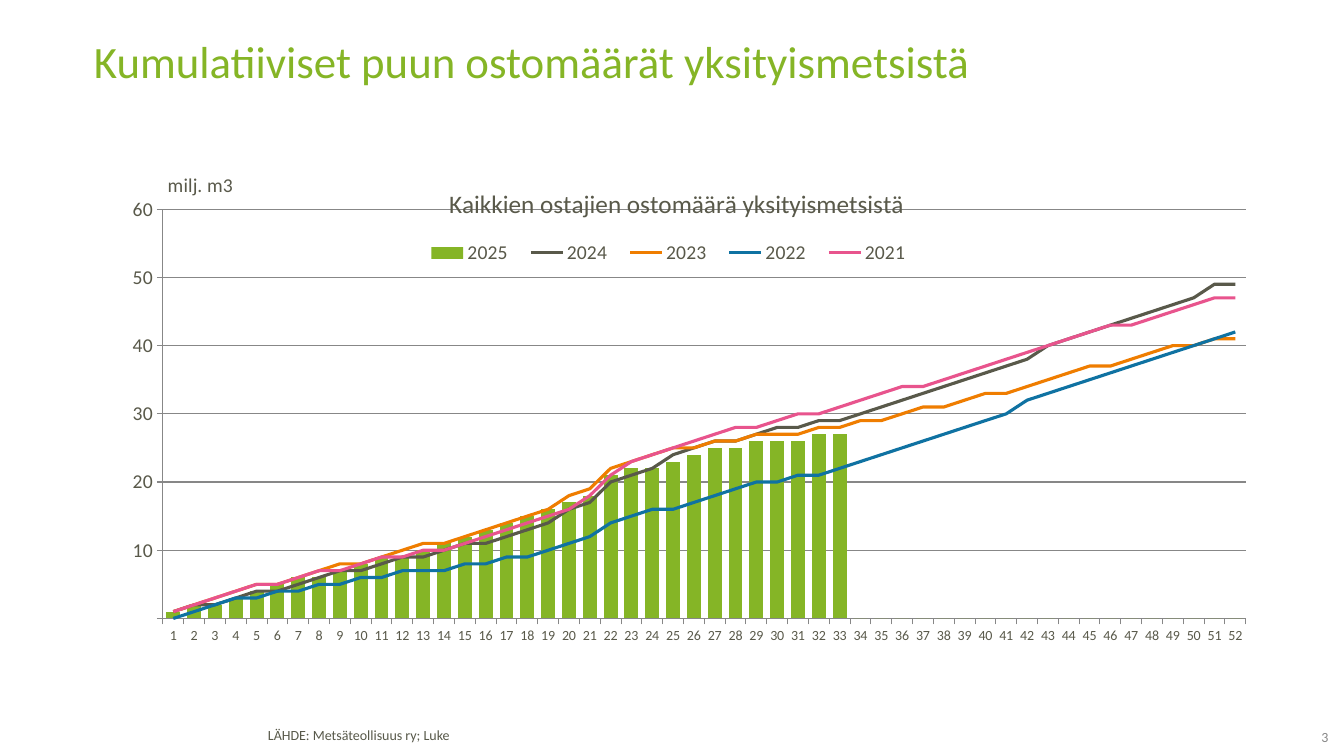
"""Build a slide comparing cumulative wood purchases by week and year."""
from dataclasses import dataclass
from itertools import pairwise

import lxml.etree
import pptx
import pptx.chart.chart
import pptx.chart.data
import pptx.dml.color
import pptx.enum.chart
import pptx.enum.text
import pptx.oxml.ns
import pptx.slide
import pptx.util

qn = pptx.oxml.ns.qn
Align = pptx.enum.text.PP_ALIGN
Anchor = pptx.enum.text.MSO_ANCHOR
Color = pptx.dml.color.RGBColor


@dataclass(frozen=True)
class Theme:
    font: str = "Calibri"
    green: str = "85B526"
    text: str = "59594A"
    source: str = "58594A"
    gray: str = "878787"
    orange: str = "EF7D00"
    blue: str = "0F72A2"
    pink: str = "E8548D"
    title_size: int = 32
    chart_title_size: int = 18
    label_size: int = 14
    small_size: int = 10
    line_width: float = 2.25
    rule_width: float = 0.75


@dataclass(frozen=True)
class Frame:
    left: float
    top: float
    width: float
    height: float


@dataclass(frozen=True)
class Label:
    text: str
    frame: Frame
    size: int
    color: str
    spacing: float = 1.0
    align: Align = Align.LEFT
    anchor: Anchor = Anchor.TOP
    insets: tuple[float, float, float, float] = (0.1, 0.05, 0.1, 0.05)


@dataclass(frozen=True)
class Year:
    name: str
    color: str
    millions: list[float]


THEME = Theme()
COLUMNS, ROWS = 160, 90
WIDTH, HEIGHT = pptx.util.Inches(13.33), pptx.util.Inches(7.5)
MILLION = 1_000_000

LABELS = [
    Label("LÄHDE: Metsäteollisuus ry; Luke", Frame(30.72, 86.16, 86.16, 3.24),
          THEME.small_size, THEME.source, spacing=0.85),
    Label("3", Frame(151.8, 86.88, 6.36, 2.28), THEME.small_size, THEME.gray,
          align=Align.RIGHT, anchor=Anchor.MIDDLE, insets=(0, 0, 0, 0.04)),
    Label("Kumulatiiviset puun ostomäärät yksityismetsistä", Frame(10, 4.68, 140.28, 11.76),
          THEME.title_size, THEME.green, spacing=0.8),
]
CHART_FRAME = Frame(10, 18.84, 140.28, 61.92)

TURNING_WEEKS = [1, 5, 10, 16, 19, 21, 22, 25, 28, 33, 39, 45, 51, 52]
YEARS = [
    Year("2025", THEME.green, [0.7, 4.3, 7.9, 12.6, 15.7, 18.2, 20.7, 23.4, 25.4, 27.1]),
    Year("2024", THEME.text, [
        0.8, 3.6, 7.3, 11.2, 14.3, 17.2, 19.7, 23.7, 26.4, 29.2, 35.2, 41.7, 48.6, 48.7]),
    Year("2023", THEME.orange, [
        0.9, 4.6, 8.4, 12.8, 16.4, 19.2, 21.8, 24.7, 26.3, 28.1, 31.8, 36.6, 41.2, 41.3]),
    Year("2022", THEME.blue, [
        0.5, 3.3, 5.8, 8.2, 9.9, 11.8, 13.8, 16.4, 19.2, 21.9, 28.3, 34.7, 41.4, 41.9]),
    Year("2021", THEME.pink, [
        0.8, 4.6, 7.9, 11.6, 14.7, 18.3, 21.4, 25, 27.9, 30.8, 36.2, 41.7, 47, 47.4]),
]


def weekly_volumes(year: Year) -> list[int]:
    volumes = [round(year.millions[0])]
    for (start, low), (end, high) in pairwise(zip(TURNING_WEEKS, year.millions)):
        step = (high - low) / (end - start)
        volumes += [round(low + step * week) for week in range(1, end - start + 1)]
    volumes += [0] * (TURNING_WEEKS[-1] - len(volumes))
    return [volume * MILLION for volume in volumes]


def place(frame: Frame) -> tuple[int, int, int, int]:
    return (round(frame.left * WIDTH / COLUMNS), round(frame.top * HEIGHT / ROWS),
            round(frame.width * WIDTH / COLUMNS), round(frame.height * HEIGHT / ROWS))


def add_span(para, text: str, size: int, color: str) -> None:
    span = para.add_run()
    span.text = text
    span.font.name = THEME.font
    span.font.size = pptx.util.Pt(size)
    span.font.bold = False
    span.font.color.rgb = Color.from_string(color)


def add_label(page: pptx.slide.Slide, label: Label) -> None:
    box = page.shapes.add_textbox(*place(label.frame)).text_frame
    box.word_wrap = True
    box.vertical_anchor = label.anchor
    box.margin_left, box.margin_top, box.margin_right, box.margin_bottom = map(
        pptx.util.Inches, label.insets)
    para = box.paragraphs[0]
    para.alignment = label.align
    para.line_spacing = label.spacing
    add_span(para, label.text, label.size, label.color)


def set_layout(parent, index: int, percents: dict[str, float], inner: bool = False) -> None:
    for old in parent.findall(qn("c:layout")):
        parent.remove(old)
    layout = parent.makeelement(qn("c:layout"))
    parent.insert(index, layout)
    manual = lxml.etree.SubElement(layout, qn("c:manualLayout"))
    settings = {"layoutTarget": "inner"} if inner else {}
    settings |= {"xMode": "edge", "yMode": "edge"}
    settings |= {key: f"{percent / 100:g}" for key, percent in percents.items()}
    for key, setting in settings.items():
        lxml.etree.SubElement(manual, qn(f"c:{key}")).set("val", setting)


def move_to_lines(chart: pptx.chart.chart.Chart) -> None:
    bars = chart.element.xpath("c:chart/c:plotArea/c:barChart")[0]
    lines = bars.makeelement(qn("c:lineChart"))
    bars.addnext(lines)
    lxml.etree.SubElement(lines, qn("c:grouping")).set("val", "standard")
    lxml.etree.SubElement(lines, qn("c:varyColors")).set("val", "0")
    for series in bars.findall(qn("c:ser"))[1:]:
        for flag in series.findall(qn("c:invertIfNegative")):
            series.remove(flag)
        lines.append(series)
    lxml.etree.SubElement(lines, qn("c:marker")).set("val", "1")
    for axis in bars.findall(qn("c:axId")):
        lxml.etree.SubElement(lines, qn("c:axId")).set("val", axis.get("val"))


def style_line(line, color: str, width: float) -> None:
    line.color.rgb = Color.from_string(color)
    line.width = pptx.util.Pt(width)


def style_axes(chart: pptx.chart.chart.Chart) -> None:
    weeks, volume = chart.category_axis, chart.value_axis
    for axis, size in ((weeks, THEME.small_size), (volume, THEME.label_size)):
        axis.major_tick_mark = pptx.enum.chart.XL_TICK_MARK.OUTSIDE
        axis.tick_labels.font.size = pptx.util.Pt(size)
        style_line(axis.format.line, THEME.gray, THEME.rule_width)
    volume.minimum_scale, volume.maximum_scale, volume.major_unit = 0, 60 * MILLION, 10 * MILLION
    volume.tick_labels.number_format = "#,,"
    volume.tick_labels.number_format_is_linked = False
    volume.has_major_gridlines = True
    style_line(volume.major_gridlines.format.line, THEME.gray, THEME.rule_width)
    add_span(volume.axis_title.text_frame.paragraphs[0], "milj. m3", THEME.label_size, THEME.text)
    title = chart.element.xpath("c:chart/c:plotArea/c:valAx/c:title")[0]
    body = title.xpath(".//a:bodyPr")[0]
    body.set("rot", "0")
    body.set("vert", "horz")
    set_layout(title, 1, {"x": 6.8, "y": 1.9})


def add_purchase_chart(page: pptx.slide.Slide) -> None:
    data = pptx.chart.data.CategoryChartData(number_format="#,,")
    data.categories = [str(week + 1) for week in range(TURNING_WEEKS[-1])]
    for year in YEARS:
        data.add_series(year.name, weekly_volumes(year))
    kind = pptx.enum.chart.XL_CHART_TYPE.COLUMN_CLUSTERED
    chart = page.shapes.add_chart(kind, *place(CHART_FRAME), data).chart
    chart.font.name = THEME.font
    chart.font.size = pptx.util.Pt(THEME.small_size)
    chart.font.color.rgb = Color.from_string(THEME.text)
    move_to_lines(chart)
    bars, lines = chart.plots
    bars.gap_width = 50
    bars.vary_by_categories = False
    bars.series[0].format.fill.solid()
    bars.series[0].format.fill.fore_color.rgb = Color.from_string(YEARS[0].color)
    for series, year in zip(lines.series, YEARS[1:]):
        style_line(series.format.line, year.color, THEME.line_width)
        series.marker.style = pptx.enum.chart.XL_MARKER_STYLE.NONE
        series.smooth = False
    style_axes(chart)
    add_span(chart.chart_title.text_frame.paragraphs[0],
             "Kaikkien ostajien ostomäärä yksityismetsistä", THEME.chart_title_size, THEME.text)
    chart.has_legend = True
    chart.legend.include_in_layout = False
    chart.legend.font.size = pptx.util.Pt(THEME.label_size)
    root = chart.element
    set_layout(root.xpath("c:chart/c:title")[0], 1, {"x": 30.6, "y": 4.5})
    set_layout(root.xpath("c:chart/c:legend")[0], 1, {"x": 28.1, "y": 14.7, "w": 43, "h": 7})
    set_layout(root.xpath("c:chart/c:plotArea")[0], 0,
               {"x": 6.7, "y": 9.8, "w": 91.9, "h": 78.7}, inner=True)


def main() -> None:
    deck = pptx.Presentation()
    deck.slide_width, deck.slide_height = WIDTH, HEIGHT
    page = deck.slides.add_slide(deck.slide_layouts[6])
    for label in LABELS:
        add_label(page, label)
    add_purchase_chart(page)
    deck.save("out.pptx")


if __name__ == "__main__":
    main()
